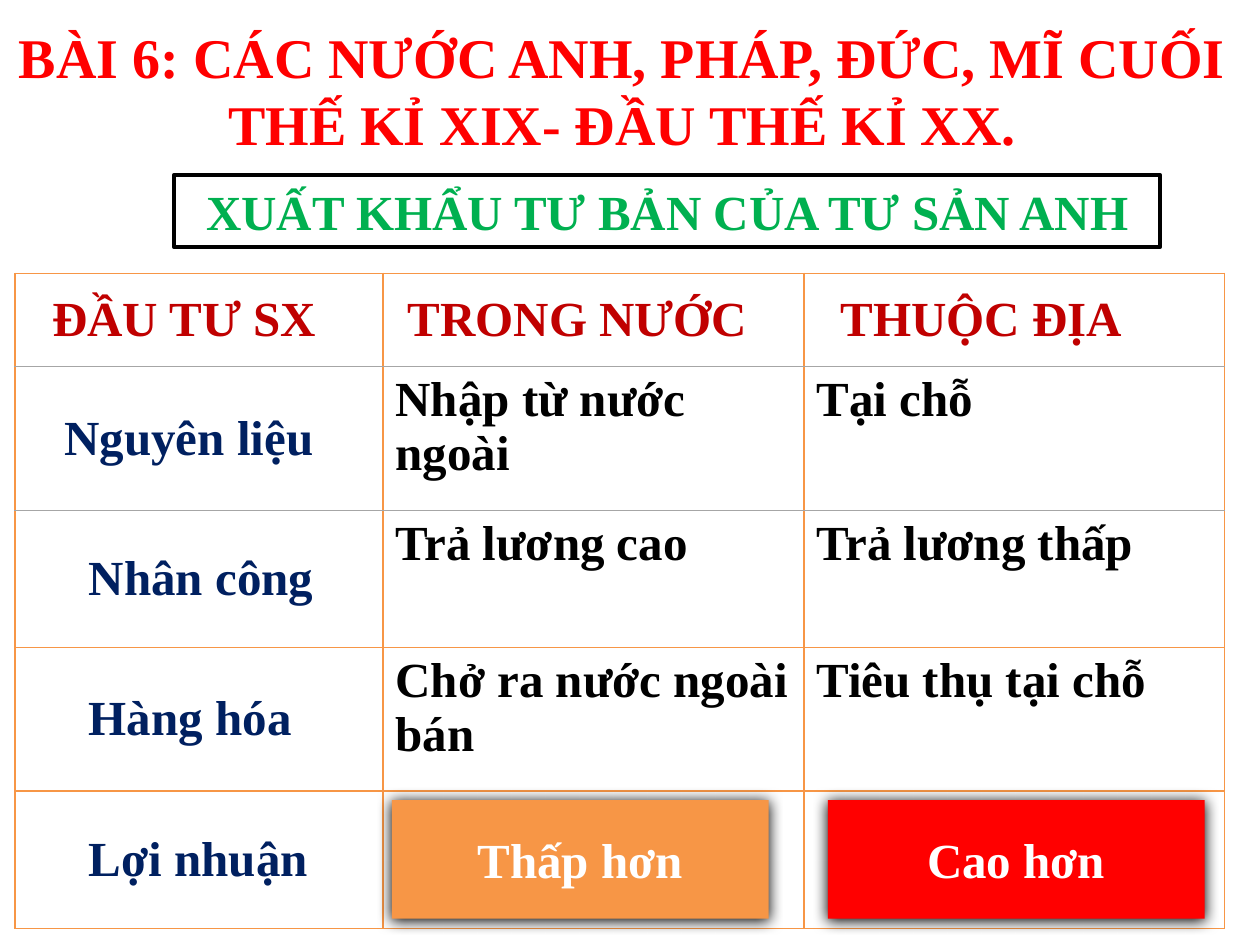
from dataclasses import dataclass

from lxml.etree import SubElement
from pptx import Presentation
from pptx.dml.color import RGBColor
from pptx.enum.shapes import MSO_SHAPE
from pptx.enum.text import MSO_ANCHOR, PP_ALIGN
from pptx.oxml import parse_xml
from pptx.oxml.ns import nsdecls, qn
from pptx.util import Emu, Inches, Pt

SLIDE_WIDTH, SLIDE_HEIGHT = Inches(10), Inches(7.5)


@dataclass(frozen=True)
class Theme:
    font: str = "Times New Roman"
    title_size: float = 32
    body_size: float = 28
    white: str = "FFFFFF"
    black: str = "000000"
    red: str = "FF0000"
    green: str = "00B050"
    header: str = "C00000"
    label: str = "002060"
    orange: str = "F79646"
    grey: str = "A6A6A6"


@dataclass(frozen=True)
class Area:
    """A rectangle in percent of the slide's width and height."""
    left: float
    top: float
    width: float
    height: float

    def box(self) -> tuple[Emu, Emu, Emu, Emu]:
        return across(self.left), down(self.top), across(self.width), down(self.height)


@dataclass(frozen=True)
class Row:
    height: float
    texts: tuple[str, str, str]
    indents: tuple[float, float, float]
    rule_below: tuple[str, float]


@dataclass(frozen=True)
class Verdict:
    text: str
    left: float
    fill: str


THEME = Theme()
STRONG_RULE = (THEME.orange, 1)
FAINT_RULE = (THEME.grey, 0.5)
COLUMN_WIDTHS = (29.2, 33.4, 33.4)
CELL_MARGIN = 1
ROWS = (
    Row(9.87, ("ĐẦU TƯ SX", "TRONG NƯỚC", "THUỘC ĐỊA"), (1.94, 0.97, 1.94), FAINT_RULE),
    Row(15.2, ("Nguyên liệu", "Nhập từ nước ngoài", "Tại chỗ"), (2.92, 0, 0), FAINT_RULE),
    Row(14.53, ("Nhân công", "Trả lương cao", "Trả lương thấp"), (4.86, 0, 0), STRONG_RULE),
    Row(15.2, ("Hàng hóa", "Chở ra nước ngoài bán", "Tiêu thụ tại chỗ"), (4.86, 0, 0), STRONG_RULE),
    Row(14.53, ("Lợi nhuận", "", ""), (4.86, 0, 0), STRONG_RULE),
)
VERDICTS = (
    Verdict("Thấp hơn", 31.1, THEME.orange),
    Verdict("Cao hơn", 65.7, THEME.red),
)


def across(percent: float) -> Emu:
    return Emu(round(SLIDE_WIDTH * percent / 100))


def down(percent: float) -> Emu:
    return Emu(round(SLIDE_HEIGHT * percent / 100))


def write(frame, text: str, color: str, size: float = THEME.body_size,
          align: PP_ALIGN = PP_ALIGN.CENTER) -> None:
    frame.text = text
    frame.word_wrap = True
    for paragraph in frame.paragraphs:
        paragraph.alignment = align
        for run in paragraph.runs:
            run.font.name = THEME.font
            run.font.size = Pt(size)
            run.font.bold = True
            run.font.color.rgb = RGBColor.from_string(color)


def add_title(slide, area: Area, text: str) -> None:
    title = slide.shapes.add_textbox(*area.box())
    write(title.text_frame, text, THEME.red, THEME.title_size)


def add_panel(slide, area: Area, text: str, fill: str, color: str):
    panel = slide.shapes.add_shape(MSO_SHAPE.RECTANGLE, *area.box())
    panel.shadow.inherit = False
    panel.fill.solid()
    panel.fill.fore_color.rgb = RGBColor.from_string(fill)
    panel.line.fill.background()
    panel.text_frame.vertical_anchor = MSO_ANCHOR.MIDDLE
    write(panel.text_frame, text, color)
    return panel


def add_shadow(panel) -> None:
    effects = panel._element.spPr.find(qn("a:effectLst"))
    shadow = SubElement(effects, qn("a:outerShdw"), blurRad=str(Pt(8.5)),
                        dist=str(Pt(1)), dir="5400000", algn="t", rotWithShape="0")
    SubElement(shadow, qn("a:srgbClr"), val=THEME.black)


def set_borders(cell, above: tuple[str, float], below: tuple[str, float]) -> None:
    edges = {"lnL": STRONG_RULE, "lnR": STRONG_RULE, "lnT": above, "lnB": below}
    properties = cell._tc.get_or_add_tcPr()
    for position, (edge, (color, width)) in enumerate(edges.items()):
        properties.insert(position, parse_xml(
            f'<a:{edge} {nsdecls("a")} w="{Pt(width)}"><a:solidFill>'
            f'<a:srgbClr val="{color}"/></a:solidFill></a:{edge}>'))


def add_comparison(slide, area: Area) -> None:
    table = slide.shapes.add_table(len(ROWS), len(COLUMN_WIDTHS), *area.box()).table
    table.first_row = table.horz_banding = False
    for column, width in zip(table.columns, COLUMN_WIDTHS):
        column.width = across(width)
    above = STRONG_RULE
    for r, row in enumerate(ROWS):
        table.rows[r].height = down(row.height)
        for c, (text, indent) in enumerate(zip(row.texts, row.indents)):
            cell = table.cell(r, c)
            heading = r == 0 or c == 0
            color = THEME.header if r == 0 else THEME.label if c == 0 else THEME.black
            cell.fill.solid()
            cell.fill.fore_color.rgb = RGBColor.from_string(THEME.white)
            cell.vertical_anchor = MSO_ANCHOR.MIDDLE if heading else MSO_ANCHOR.TOP
            cell.margin_left = across(CELL_MARGIN + indent)
            write(cell.text_frame, text, color, align=PP_ALIGN.LEFT)
            set_borders(cell, above, row.rule_below)
        above = row.rule_below


def main() -> None:
    presentation = Presentation()
    presentation.slide_width, presentation.slide_height = SLIDE_WIDTH, SLIDE_HEIGHT
    slide = presentation.slides.add_slide(presentation.slide_layouts[6])

    add_comparison(slide, Area(1.2, 28.93, sum(COLUMN_WIDTHS), sum(row.height for row in ROWS)))
    heading = add_panel(slide, Area(13.8, 18.53, 78.3, 7.6),
                        "XUẤT KHẨU TƯ BẢN CỦA TƯ SẢN ANH", THEME.white, THEME.green)
    heading.line.color.rgb = RGBColor.from_string(THEME.black)
    heading.line.width = Pt(2.25)
    for verdict in VERDICTS:
        add_shadow(add_panel(slide, Area(verdict.left, 84.67, 29.9, 12.53),
                             verdict.text, verdict.fill, THEME.white))
    add_title(slide, Area(0, 1.73, 98.8, 16.8),
              "BÀI 6: CÁC NƯỚC ANH, PHÁP, ĐỨC, MĨ CUỐI THẾ KỈ XIX- ĐẦU THẾ KỈ XX.")
    presentation.save("out.pptx")


if __name__ == "__main__":
    main()
